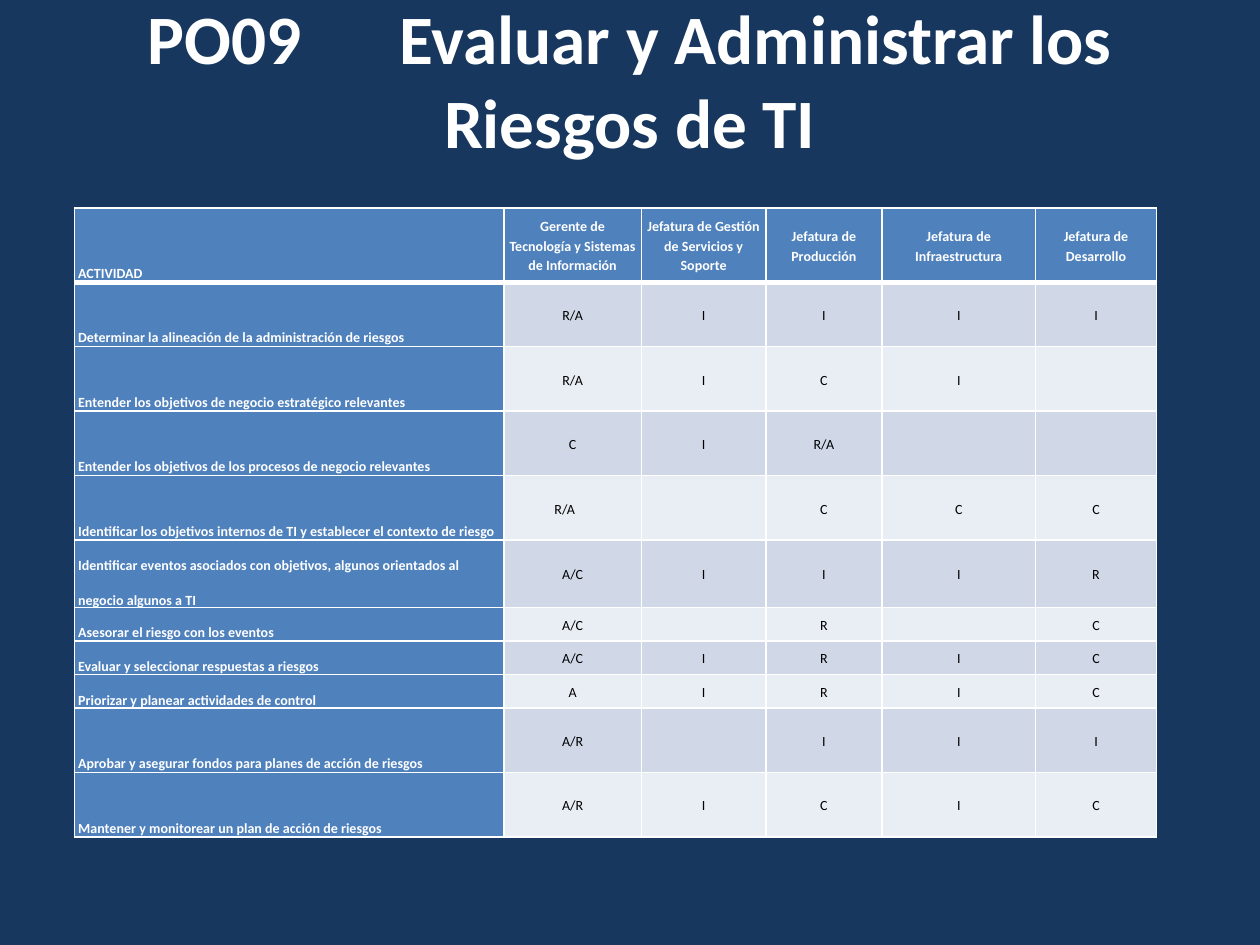
"""Build the PO09 responsibility matrix slide."""
import dataclasses
import typing

import lxml.etree
import pptx
import pptx.dml.color
import pptx.enum.text
import pptx.oxml.ns
import pptx.util

NAVY = pptx.dml.color.RGBColor(0x17, 0x37, 0x5E)
BLUE = pptx.dml.color.RGBColor(0x4F, 0x81, 0xBD)
BAND_DARK = pptx.dml.color.RGBColor(0xD0, 0xD8, 0xE8)
BAND_LIGHT = pptx.dml.color.RGBColor(0xE9, 0xED, 0xF4)
WHITE = pptx.dml.color.RGBColor(0xFF, 0xFF, 0xFF)
BLACK = pptx.dml.color.RGBColor(0x00, 0x00, 0x00)

LEFT = pptx.enum.text.PP_ALIGN.LEFT
CENTER = pptx.enum.text.PP_ALIGN.CENTER
MIDDLE = pptx.enum.text.MSO_ANCHOR.MIDDLE
BOTTOM = pptx.enum.text.MSO_ANCHOR.BOTTOM

WIDTH = pptx.util.Inches(10)
HEIGHT = pptx.util.Inches(7.5)
FONT = "Calibri"
TEXT_SIZE = pptx.util.Pt(8)
THIN = pptx.util.Pt(1)
THICK = pptx.util.Pt(3)
COLUMN_SHARES = (0.341, 0.109, 0.099, 0.092, 0.122, 0.096)
HEADER_HEIGHT = pptx.util.Inches(0.59)
ROW_UNIT = pptx.util.Inches(0.256)
CELL_INSETS = {
    "margin_left": pptx.util.Inches(0.03),
    "margin_right": pptx.util.Inches(0.03),
    "margin_top": 0,
    "margin_bottom": 0,
}


@dataclasses.dataclass(frozen=True)
class CellStyle:
    """Look of one kind of table cell."""

    fill: pptx.dml.color.RGBColor
    color: pptx.dml.color.RGBColor
    bold: bool
    anchor: typing.Any = MIDDLE
    alignment: typing.Any = CENTER
    line_spacing: float = 1.15


@dataclasses.dataclass(frozen=True)
class Activity:
    """Activity, the role codes of its five posts, and its height in row units."""

    name: str
    roles: tuple[str, ...]
    units: int = 2


HEADER = CellStyle(BLUE, WHITE, True)
CORNER = dataclasses.replace(HEADER, anchor=BOTTOM, alignment=LEFT)
NAME = dataclasses.replace(CORNER, line_spacing=2.0)
BANDS = (CellStyle(BAND_DARK, BLACK, False), CellStyle(BAND_LIGHT, BLACK, False))
INDENTED_CELL = (4, 1)
INDENT = pptx.util.Inches(0.37)

HEADINGS = (
    "ACTIVIDAD",
    "Gerente de Tecnología y Sistemas de Información",
    "Jefatura de Gestión de Servicios y Soporte",
    "Jefatura de Producción",
    "Jefatura de Infraestructura",
    "Jefatura de Desarrollo",
)
ACTIVITIES = (
    Activity("Determinar la alineación de la administración de riesgos", ("R/A", "I", "I", "I", "I")),
    Activity("Entender los objetivos de negocio estratégico relevantes", ("R/A", "I", "C", "I", "")),
    Activity("Entender los objetivos de los procesos de negocio relevantes", ("C", "I", "R/A", "", "")),
    Activity(
        "Identificar los objetivos internos de TI y establecer el contexto de riesgo",
        ("R/A", "", "C", "C", "C"),
    ),
    Activity(
        "Identificar eventos asociados con objetivos, algunos orientados al negocio algunos a TI",
        ("A/C", "I", "I", "I", "R"),
    ),
    Activity("Asesorar el riesgo con los eventos", ("A/C", "", "R", "", "C"), 1),
    Activity("Evaluar y seleccionar respuestas a riesgos", ("A/C", "I", "R", "I", "C"), 1),
    Activity("Priorizar y planear actividades de control", ("A", "I", "R", "I", "C"), 1),
    Activity("Aprobar y asegurar fondos para planes de acción de riesgos", ("A/R", "", "I", "I", "I")),
    Activity("Mantener y monitorear un plan de acción de riesgos", ("A/R", "I", "C", "I", "C")),
)


def apply_format(target: typing.Any, values: dict[str, typing.Any]) -> None:
    """Set every named attribute on the target."""
    for name, value in values.items():
        setattr(target, name, value)


def write_text(
    paragraph: typing.Any,
    text: str,
    size: int,
    color: pptx.dml.color.RGBColor,
    bold: bool,
) -> None:
    """Add one formatted run, or size the paragraph mark when there is no text."""
    if not text:
        mark = lxml.etree.SubElement(paragraph._p, pptx.oxml.ns.qn("a:endParaRPr"))
        mark.set("sz", str(int(size / pptx.util.Pt(1) * 100)))
        return
    run = paragraph.add_run()
    run.text = text
    apply_format(run.font, {"name": FONT, "size": size, "bold": bold})
    run.font.color.rgb = color


def draw_borders(cell: typing.Any, top: int, bottom: int) -> None:
    """Give a cell white borders on its four sides."""
    properties = cell._tc.get_or_add_tcPr()
    for side, width in {"L": THIN, "R": THIN, "T": top, "B": bottom}.items():
        line = lxml.etree.SubElement(properties, pptx.oxml.ns.qn(f"a:ln{side}"), w=str(width))
        fill = lxml.etree.SubElement(line, pptx.oxml.ns.qn("a:solidFill"))
        lxml.etree.SubElement(fill, pptx.oxml.ns.qn("a:srgbClr"), val=str(WHITE))


def draw_cell(cell: typing.Any, text: str, style: CellStyle, row: int) -> None:
    """Fill, border and write one table cell."""
    draw_borders(cell, THICK if row == 1 else THIN, THICK if row == 0 else THIN)
    cell.fill.solid()
    cell.fill.fore_color.rgb = style.fill
    apply_format(cell, {"vertical_anchor": style.anchor, **CELL_INSETS})
    paragraph = cell.text_frame.paragraphs[0]
    apply_format(paragraph, {"alignment": style.alignment, "line_spacing": style.line_spacing})
    write_text(paragraph, text, TEXT_SIZE, style.color, style.bold)


def draw_title(slide: typing.Any) -> None:
    """Write the slide title, raised within its box by the bottom inset."""
    shape = slide.shapes.add_textbox(
        int(WIDTH * 0.05), int(HEIGHT * 0.04), int(WIDTH * 0.9), int(HEIGHT / 6)
    )
    apply_format(shape.text_frame, {
        "word_wrap": True,
        "vertical_anchor": MIDDLE,
        "margin_top": 0,
        "margin_bottom": pptx.util.Inches(0.6),
    })
    paragraph = shape.text_frame.paragraphs[0]
    paragraph.alignment = CENTER
    paragraph._p.get_or_add_pPr().set("defTabSz", str(pptx.util.Inches(1)))
    title = "PO09\tEvaluar y Administrar los Riesgos de TI"
    write_text(paragraph, title, pptx.util.Pt(39.6), WHITE, True)


def draw_matrix(slide: typing.Any) -> None:
    """Draw the table of activities and roles."""
    heights = [HEADER_HEIGHT] + [ROW_UNIT * activity.units for activity in ACTIVITIES]
    table = slide.shapes.add_table(
        len(heights), len(HEADINGS), int(WIDTH * 0.059), int(HEIGHT * 0.22),
        int(WIDTH * sum(COLUMN_SHARES)), sum(heights),
    ).table
    for column, share in zip(table.columns, COLUMN_SHARES):
        column.width = int(WIDTH * share)
    for row, height in zip(table.rows, heights):
        row.height = height
    for column, heading in enumerate(HEADINGS):
        draw_cell(table.cell(0, column), heading, HEADER if column else CORNER, 0)
    for row, activity in enumerate(ACTIVITIES, start=1):
        band = BANDS[(row - 1) % 2]
        for column, text in enumerate((activity.name, *activity.roles)):
            draw_cell(table.cell(row, column), text, band if column else NAME, row)
    paragraph = table.cell(*INDENTED_CELL).text_frame.paragraphs[0]
    paragraph.alignment = LEFT
    paragraph._p.get_or_add_pPr().set("marL", str(INDENT))


def main() -> None:
    """Create and save the presentation."""
    presentation = pptx.Presentation()
    apply_format(presentation, {"slide_width": WIDTH, "slide_height": HEIGHT})
    slide = presentation.slides.add_slide(presentation.slide_layouts[6])
    slide.background.fill.solid()
    slide.background.fill.fore_color.rgb = NAVY
    draw_title(slide)
    draw_matrix(slide)
    presentation.save("out.pptx")


if __name__ == "__main__":
    main()
